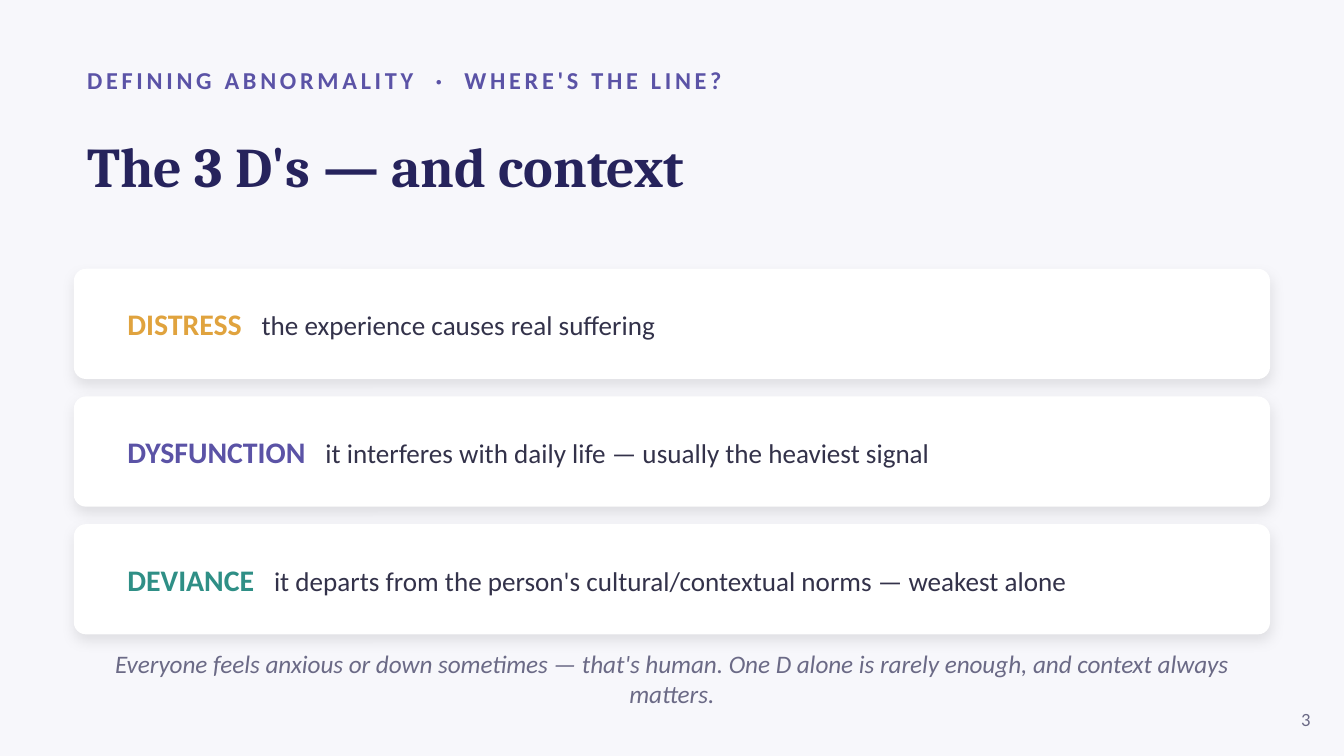
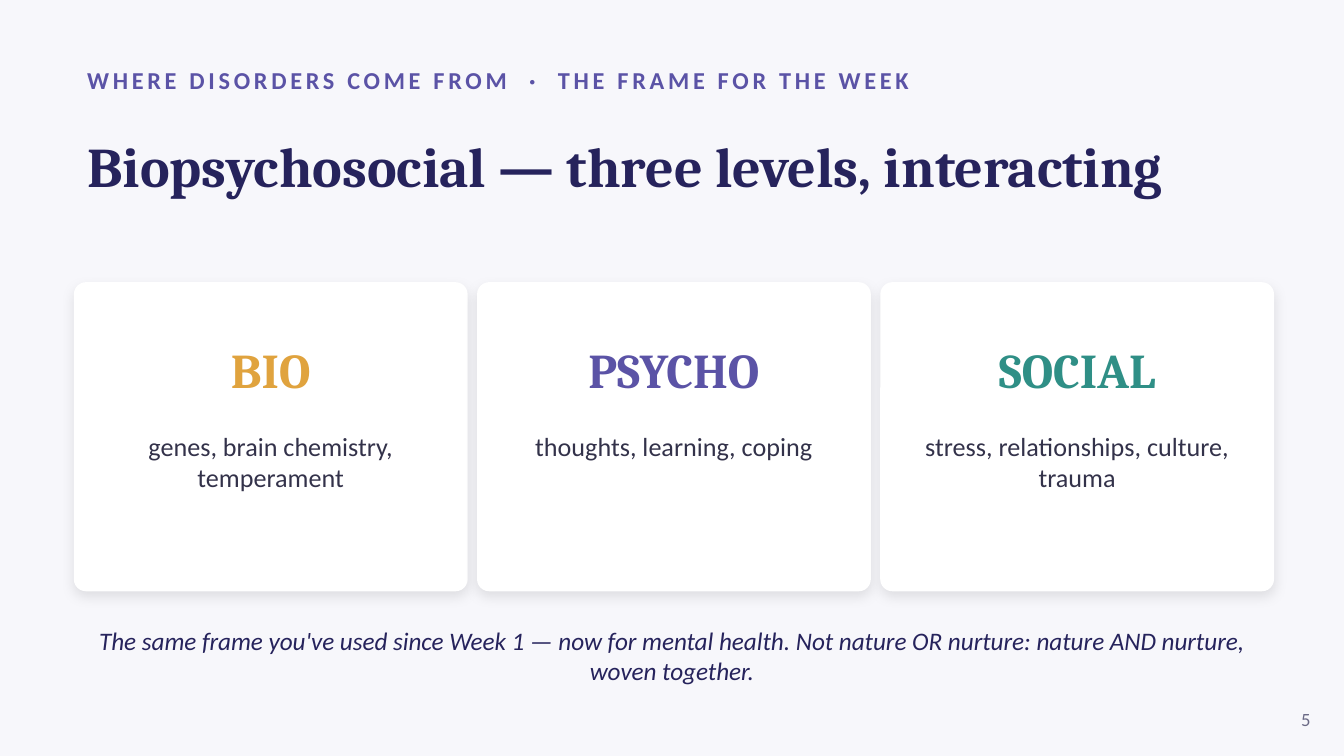
from dataclasses import dataclass

from lxml import etree
from pptx import Presentation
from pptx.dml.color import RGBColor
from pptx.enum.shapes import MSO_SHAPE
from pptx.enum.text import MSO_ANCHOR, MSO_AUTO_SIZE, PP_ALIGN
from pptx.oxml.ns import qn
from pptx.util import Pt

ROUNDED = MSO_SHAPE.ROUNDED_RECTANGLE
TOP, MIDDLE = MSO_ANCHOR.TOP, MSO_ANCHOR.MIDDLE
LEFT, CENTER, RIGHT = PP_ALIGN.LEFT, PP_ALIGN.CENTER, PP_ALIGN.RIGHT
NO_AUTOFIT = MSO_AUTO_SIZE.NONE
EMU_PER_PX = 4572
TITLE_ONLY = 5


@dataclass(frozen=True)
class Style:
    """Look of one kind of text."""
    size: float
    color: str
    font: str = "Calibri"
    bold: bool = False
    italic: bool = False
    spacing: float = 0


@dataclass(frozen=True)
class Theme:
    """Colours, type sizes and spacing of the deck."""
    page: str = "F7F7FB"
    card: str = "FFFFFF"
    shadow: str = "000000"
    navy: str = "26235C"
    violet: str = "5B53A6"
    amber: str = "E0A33E"
    teal: str = "2F8F86"
    ink: str = "33324A"
    muted: str = "6B6A86"
    serif: str = "Cambria"
    eyebrow_size: float = 13
    title_size: float = 30
    term_size: float = 16
    meaning_size: float = 14.5
    level_size: float = 26
    factors_size: float = 14
    note_size: float = 13.5
    number_size: float = 10
    tracking: float = 2
    gap: float = 7
    radius: int = 18


THEME = Theme()
ACCENTS = (THEME.amber, THEME.violet, THEME.teal)


def px(length):
    """Turn whole px into EMU."""
    return length * EMU_PER_PX


def place(box):
    """Turn a px box into EMU values."""
    return [px(length) for length in box]


def write(frame, runs, align=LEFT, anchor=MIDDLE):
    """Fill a text frame with one paragraph of styled runs."""
    frame.word_wrap = True
    frame.auto_size = NO_AUTOFIT
    frame.vertical_anchor = anchor
    paragraph = frame.paragraphs[0]
    paragraph.alignment = align
    for text, style in runs:
        run = paragraph.add_run()
        run.text = text
        font = run.font
        font.name, font.size = style.font, Pt(style.size)
        font.bold, font.italic = style.bold, style.italic
        font.color.rgb = RGBColor.from_string(style.color)
        if style.spacing:
            font._element.set("spc", str(round(style.spacing * 100)))


def add_text(slide, box, runs, align=LEFT, anchor=MIDDLE):
    """Add a text box with styled runs."""
    write(slide.shapes.add_textbox(*place(box)).text_frame, runs, align, anchor)


def add_card(slide, box):
    """Add a white rounded card with a soft shadow."""
    card = slide.shapes.add_shape(ROUNDED, *place(box))
    card.adjustments[0] = THEME.radius / min(box[2:])
    card.fill.solid()
    card.fill.fore_color.rgb = RGBColor.from_string(THEME.card)
    card.line.fill.background()
    card.shadow.inherit = False
    effects = card._element.spPr.find(qn("a:effectLst"))
    shadow = etree.SubElement(effects, qn("a:outerShdw"), blurRad=str(Pt(7)),
                              dist=str(Pt(3)), dir="5400000", rotWithShape="0")
    tint = etree.SubElement(shadow, qn("a:srgbClr"), val=THEME.shadow)
    etree.SubElement(tint, qn("a:alpha"), val="10000")


def add_page(prs, topic, angle, title, number):
    """Add a slide with its eyebrow, title and page number."""
    slide = prs.slides.add_slide(prs.slide_layouts[TITLE_ONLY])
    eyebrow = Style(THEME.eyebrow_size, THEME.violet, bold=True, spacing=THEME.tracking)
    gap = Style(THEME.eyebrow_size, THEME.violet, bold=True, spacing=THEME.gap)
    add_text(slide, (110, 84, 1800, 70),
             [(topic, eyebrow), (" ", gap), ("·", eyebrow), (" ", gap), (angle, eyebrow)])
    heading = slide.shapes.title
    heading.left, heading.top, heading.width, heading.height = place((110, 156, 1780, 180))
    write(heading.text_frame,
          [(title, Style(THEME.title_size, THEME.navy, THEME.serif, bold=True))])
    add_text(slide, (1870, 1040, 100, 60),
             [(number, Style(THEME.number_size, THEME.muted))], RIGHT)
    return slide


def add_note(slide, box, note, color):
    """Add the closing remark in centred italics."""
    add_text(slide, box, [(note, Style(THEME.note_size, color, italic=True))], CENTER)


def add_definition(slide, box, term, meaning, accent):
    """Add a wide card with a coloured term and its meaning."""
    left, top, width, height = box
    add_card(slide, box)
    add_text(slide, (left + 60, top + 8, width - 120, height - 16), [
        (term, Style(THEME.term_size, accent, bold=True)),
        (" ", Style(THEME.term_size, accent, bold=True, spacing=THEME.gap)),
        (meaning, Style(THEME.meaning_size, THEME.ink)),
    ])


def add_level(slide, box, level, factors, accent):
    """Add a tall card with a coloured level and its factors."""
    left, top, width, _ = box
    add_card(slide, box)
    add_text(slide, (left, top + 70, width, 120),
             [(level, Style(THEME.level_size, accent, THEME.serif, bold=True))], CENTER)
    add_text(slide, (left + 40, top + 210, width - 80, 220),
             [(factors, Style(THEME.factors_size, THEME.ink))], CENTER, TOP)


def build_definitions(prs):
    """Build the slide on the three D's."""
    slide = add_page(prs, "DEFINING ABNORMALITY", "WHERE'S THE LINE?",
                     "The 3 D's — and context", "3")
    definitions = (
        ("DISTRESS", "the experience causes real suffering"),
        ("DYSFUNCTION", "it interferes with daily life — usually the heaviest signal"),
        ("DEVIANCE", "it departs from the person's cultural/contextual norms — weakest alone"),
    )
    for row, ((term, meaning), accent) in enumerate(zip(definitions, ACCENTS)):
        add_definition(slide, (110, 400 + row * 190, 1780, 164), term, meaning, accent)
    add_note(slide, (110, 970, 1780, 80),
             "Everyone feels anxious or down sometimes — that's human. "
             "One D alone is rarely enough, and context always matters.", THEME.muted)


def build_levels(prs):
    """Build the slide on the biopsychosocial frame."""
    slide = add_page(prs, "WHERE DISORDERS COME FROM", "THE FRAME FOR THE WEEK",
                     "Biopsychosocial — three levels, interacting", "5")
    levels = (
        ("BIO", "genes, brain chemistry, temperament"),
        ("PSYCHO", "thoughts, learning, coping"),
        ("SOCIAL", "stress, relationships, culture, trauma"),
    )
    for column, ((level, factors), accent) in enumerate(zip(levels, ACCENTS)):
        add_level(slide, (110 + column * 600, 420, 586, 460), level, factors, accent)
    add_note(slide, (110, 930, 1780, 90),
             "The same frame you've used since Week 1 — now for mental health. "
             "Not nature OR nurture: nature AND nurture, woven together.", THEME.navy)


def main():
    """Build and save the deck."""
    prs = Presentation()
    prs.slide_width, prs.slide_height = px(2000), px(1125)
    page = prs.slide_master.background.fill
    page.solid()
    page.fore_color.rgb = RGBColor.from_string(THEME.page)
    build_definitions(prs)
    build_levels(prs)
    prs.save("out.pptx")


if __name__ == "__main__":
    main()
